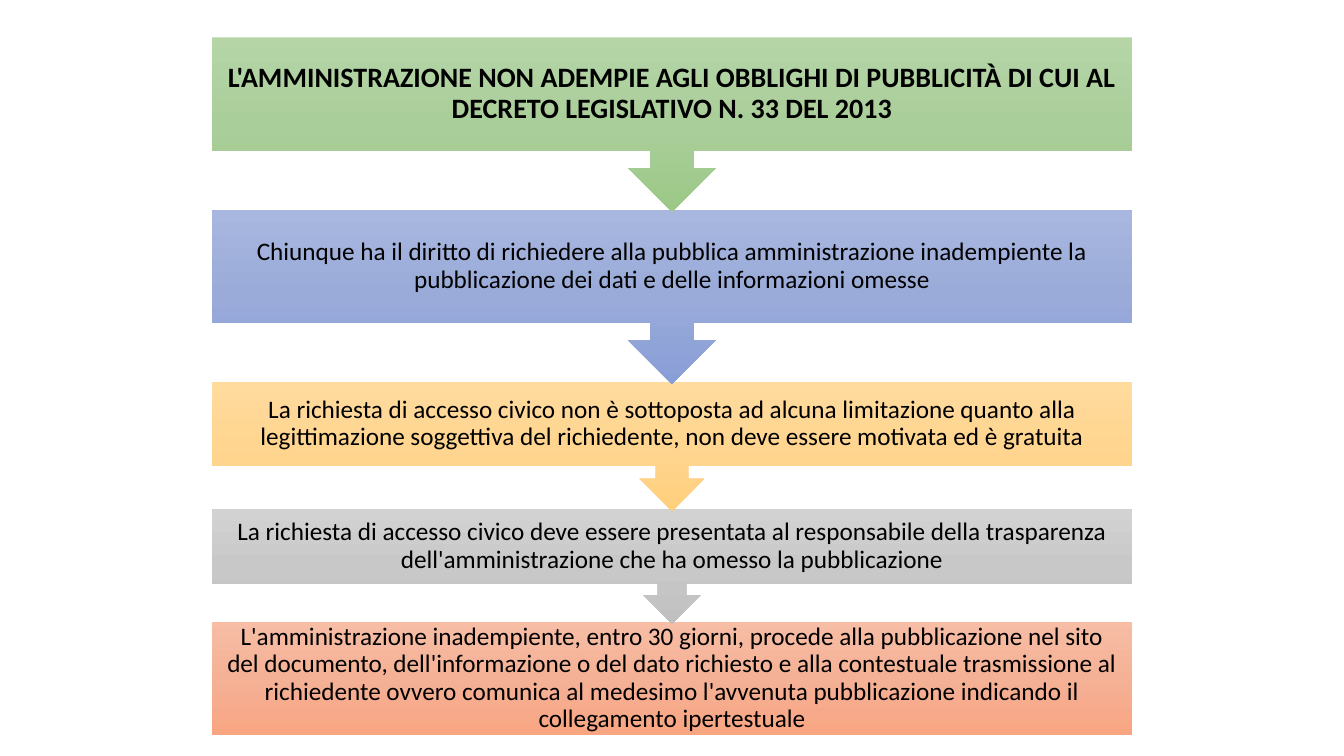
from copy import deepcopy
from dataclasses import dataclass

from pptx import Presentation
from pptx.dml.color import RGBColor
from pptx.enum.shapes import MSO_SHAPE
from pptx.enum.text import MSO_ANCHOR, PP_ALIGN
from pptx.util import Inches, Pt

CALLOUT = MSO_SHAPE.DOWN_ARROW_CALLOUT
RECTANGLE = MSO_SHAPE.RECTANGLE
MIDDLE = MSO_ANCHOR.MIDDLE
CENTER = PP_ALIGN.CENTER

BLACK = RGBColor(0x00, 0x00, 0x00)
GREEN = RGBColor(0xB5, 0xD5, 0xA7), RGBColor(0xAA, 0xCE, 0x9A), RGBColor(0x9C, 0xC9, 0x87)
BLUE = RGBColor(0xA8, 0xB7, 0xDF), RGBColor(0x9A, 0xAB, 0xD9), RGBColor(0x88, 0x9E, 0xD7)
YELLOW = RGBColor(0xFF, 0xDB, 0x9E), RGBColor(0xFF, 0xD5, 0x90), RGBColor(0xFF, 0xD0, 0x7C)
GREY = RGBColor(0xD2, 0xD2, 0xD2), RGBColor(0xC8, 0xC8, 0xC8), RGBColor(0xC0, 0xC0, 0xC0)
ORANGE = RGBColor(0xF7, 0xBD, 0xA5), RGBColor(0xF5, 0xB1, 0x96), RGBColor(0xF8, 0xA5, 0x82)

SLIDE_WIDTH, SLIDE_HEIGHT = 13.33, 7.5
STEP_WIDTH = 9.13
STEP_LEFT = (SLIDE_WIDTH - STEP_WIDTH) / 2
FIRST_TOP = 0.37
OVERLAP = 0.02


@dataclass
class Step:
    """One stage of the procedure."""
    text: str
    height: float
    colors: tuple
    inset: float = 0.14
    size: int = 18
    bold: bool = False
    kind: int = CALLOUT


STEPS = [
    Step("L'AMMINISTRAZIONE NON ADEMPIE AGLI OBBLIGHI DI PUBBLICITÀ DI CUI AL "
         "DECRETO LEGISLATIVO N. 33 DEL 2013", 1.73, GREEN, 0.16, 20, True),
    Step("Chiunque ha il diritto di richiedere alla pubblica amministrazione "
         "inadempiente la pubblicazione dei dati e delle informazioni omesse", 1.73, BLUE),
    Step("La richiesta di accesso civico non è sottoposta ad alcuna limitazione "
         "quanto alla legittimazione soggettiva del richiedente, non deve essere "
         "motivata ed è gratuita", 1.28, YELLOW),
    Step("La richiesta di accesso civico deve essere presentata al responsabile "
         "della trasparenza dell'amministrazione che ha omesso la pubblicazione",
         1.14, GREY),
    Step("L'amministrazione inadempiente, entro 30 giorni, procede alla pubblicazione "
         "nel sito del documento, dell'informazione o del dato richiesto e alla "
         "contestuale trasmissione al richiedente ovvero comunica al medesimo "
         "l'avvenuta pubblicazione indicando il collegamento ipertestuale",
         1.12, ORANGE, 0.12, kind=RECTANGLE),
]


def fill_gradient(shape, colors):
    """Fill a shape from top to bottom with evenly spaced colours."""
    shape.fill.gradient()
    shape.fill.gradient_angle = 270
    first_stop = shape.element.spPr.xpath(".//a:gs")[0]
    first_stop.addnext(deepcopy(first_stop))
    for index, (stop, color) in enumerate(zip(shape.fill.gradient_stops, colors)):
        stop.color.rgb = color
        stop.position = index / (len(colors) - 1)


def write_text(shape, step):
    """Write the centred wording of a step."""
    frame = shape.text_frame
    frame.text = step.text
    frame.word_wrap = True
    frame.vertical_anchor = MIDDLE
    frame.margin_left = frame.margin_right = Inches(step.inset)
    frame.margin_top = frame.margin_bottom = 0
    para = frame.paragraphs[0]
    para.alignment = CENTER
    para.line_spacing = 0.9
    font = para.runs[0].font
    font.name = "Calibri"
    font.size = Pt(step.size)
    font.bold = step.bold
    font.color.rgb = BLACK


def add_step(page, step, top):
    """Add one step, with its down arrow when another step follows."""
    shape = page.shapes.add_shape(step.kind, Inches(STEP_LEFT), Inches(top),
                                  Inches(STEP_WIDTH), Inches(step.height))
    shape.shadow.inherit = False
    shape.line.fill.background()
    fill_gradient(shape, step.colors)
    write_text(shape, step)


def main():
    """Build the slide, stacking the steps from the bottom up."""
    deck = Presentation()
    deck.slide_width, deck.slide_height = Inches(SLIDE_WIDTH), Inches(SLIDE_HEIGHT)
    page = deck.slides.add_slide(deck.slide_layouts[6])
    bottom = FIRST_TOP + sum(step.height - OVERLAP for step in STEPS)
    for step in reversed(STEPS):
        bottom -= step.height - OVERLAP
        add_step(page, step, bottom)
    deck.save("out.pptx")


if __name__ == "__main__":
    main()
